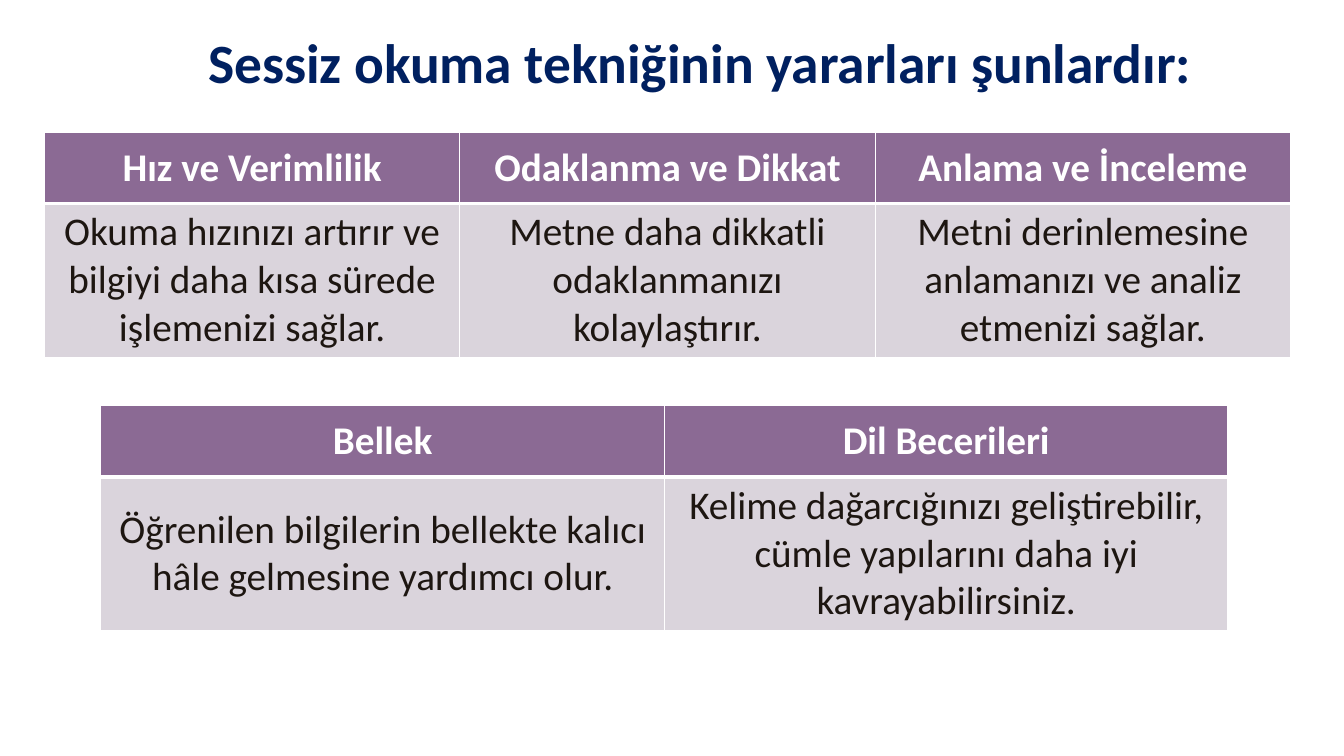
from dataclasses import dataclass

from lxml import etree
from pptx import Presentation
from pptx.dml.color import RGBColor
from pptx.enum.text import MSO_ANCHOR, MSO_AUTO_SIZE, PP_ALIGN
from pptx.oxml.ns import qn
from pptx.util import Inches, Pt

CENTER = PP_ALIGN.CENTER
MIDDLE, BOTTOM = MSO_ANCHOR.MIDDLE, MSO_ANCHOR.BOTTOM
NO_FIT = MSO_AUTO_SIZE.NONE


@dataclass(frozen=True)
class Theme:
    font: str = "Calibri"
    navy: str = "002060"
    white: str = "FFFFFF"
    ink: str = "1D1611"
    plum: str = "8B6A94"
    mist: str = "DAD4DC"
    head: float = 39.6
    body: float = 28


THEME = Theme()


def write(frame, text, size=THEME.body, color=THEME.ink, bold=False, space=1.0):
    frame.text = text
    para = frame.paragraphs[0]
    para.alignment = CENTER
    para.line_spacing = space
    font = para.runs[0].font
    font.name, font.size, font.bold = THEME.font, Pt(size), bold
    font.color.rgb = RGBColor.from_string(color)


def edge(cell, side, width):
    """Draw one white border of a cell; call it before filling the cell."""
    line = etree.SubElement(cell._tc.get_or_add_tcPr(), qn(f"a:ln{side}"), w=str(Pt(width)))
    fill = etree.SubElement(line, qn("a:solidFill"))
    etree.SubElement(fill, qn("a:srgbClr"), val=THEME.white)


deck = Presentation()
deck.slide_width, deck.slide_height = Inches(13.33), Inches(7.5)
slide = deck.slides.add_slide(deck.slide_layouts[5])

title = slide.shapes.title
title.left, title.top = Inches(1), Inches(0.36)
title.width, title.height = Inches(11.89), Inches(0.65)
frame = title.text_frame
frame.auto_size, frame.vertical_anchor, frame.word_wrap = NO_FIT, BOTTOM, True
frame.margin_left = frame.margin_right = Inches(0.13)
frame.margin_top = frame.margin_bottom = Inches(0.07)
write(frame, "Sessiz okuma tekniğinin yararları şunlardır:",
      size=THEME.head, color=THEME.navy, bold=True, space=0.85)

# Left, top, column width, then a heading and a text for each column
tables = [
    (0.44, 1.31, 4.12, [
        ("Hız ve Verimlilik",
         "Okuma hızınızı artırır ve bilgiyi daha kısa sürede işlemenizi sağlar."),
        ("Odaklanma ve Dikkat",
         "Metne daha dikkatli odaklanmanızı kolaylaştırır."),
        ("Anlama ve İnceleme",
         "Metni derinlemesine anlamanızı ve analiz etmenizi sağlar."),
    ]),
    (1, 4.02, 5.59, [
        ("Bellek",
         "Öğrenilen bilgilerin bellekte kalıcı hâle gelmesine yardımcı olur."),
        ("Dil Becerileri",
         "Kelime dağarcığınızı geliştirebilir, cümle yapılarını daha iyi kavrayabilirsiniz."),
    ]),
]
# Row height, fill, text colour, bold, top and bottom border
rows = [
    (0.71, THEME.plum, THEME.white, True, 1, 3),
    (1.5, THEME.mist, THEME.ink, False, 3, 1),
]

for left, top, width, items in tables:
    table = slide.shapes.add_table(
        len(rows), len(items), Inches(left), Inches(top),
        Inches(width * len(items)), Inches(sum(row[0] for row in rows))).table
    for col in table.columns:
        col.width = Inches(width)
    for r, (height, fill, color, bold, above, below) in enumerate(rows):
        table.rows[r].height = Inches(height)
        for c, item in enumerate(items):
            cell = table.cell(r, c)
            for side, line in (("L", 1), ("R", 1), ("T", above), ("B", below)):
                edge(cell, side, line)
            cell.fill.solid()
            cell.fill.fore_color.rgb = RGBColor.from_string(fill)
            cell.vertical_anchor = MIDDLE
            write(cell.text_frame, item[r], color=color, bold=bold)

deck.save("out.pptx")
